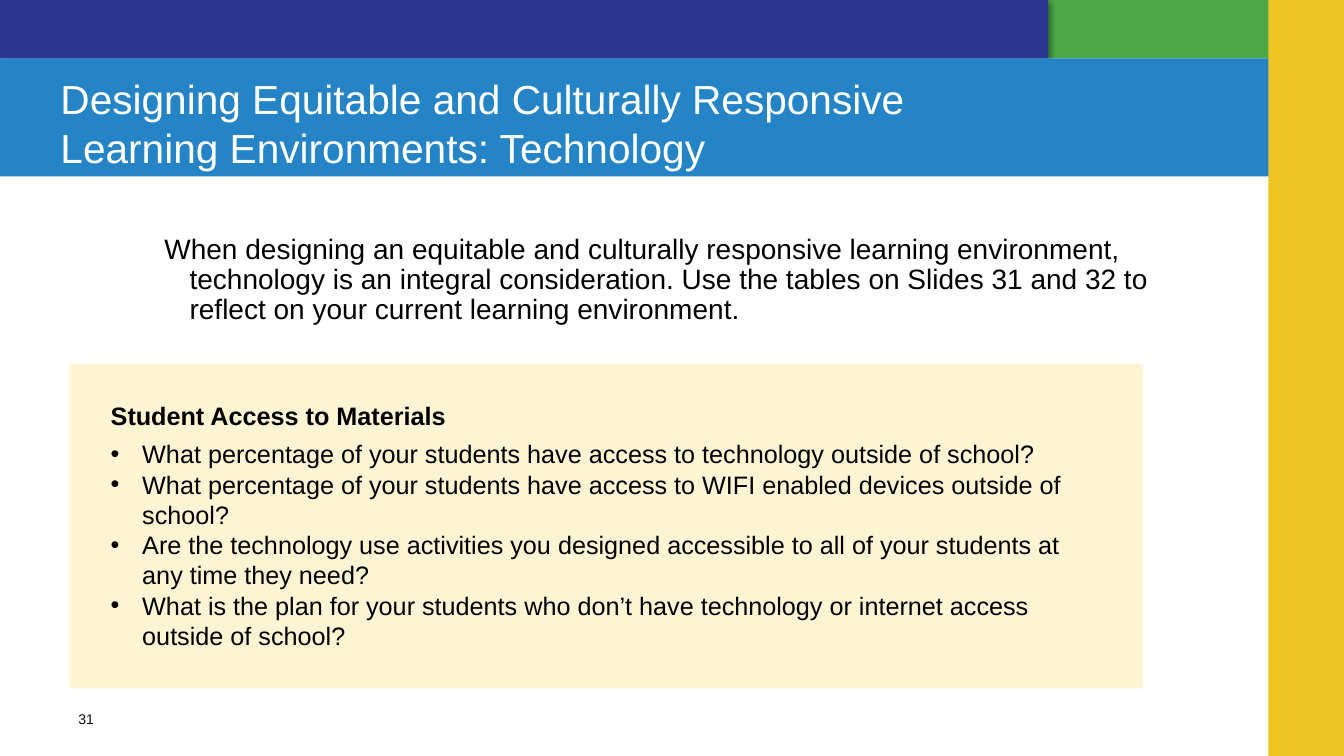
from lxml.etree import SubElement
from pptx import Presentation
from pptx.dml.color import RGBColor
from pptx.enum.shapes import MSO_SHAPE
from pptx.enum.text import MSO_ANCHOR, PP_ALIGN
from pptx.oxml import parse_xml
from pptx.oxml.ns import nsdecls, qn
from pptx.util import Pt

COLORS = {
    "green": "4EA848", "navy": "2B3890", "blue": "2484C6", "yellow": "EEC621",
    "cream": "FCF4D3", "white": "FFFFFF", "black": "000000", "gray": "0D0D0D",
}
W, H = 960, 540
BAND_H, TITLE_H, SIDE_W = 41.8, 84.2, 54

prs = Presentation()
prs.slide_width, prs.slide_height = Pt(W), Pt(H)
s = prs.slides.add_slide(prs.slide_layouts[6])


def add_rect(x, y, w, h, color):
    sp = s.shapes.add_shape(MSO_SHAPE.RECTANGLE, Pt(x), Pt(y), Pt(w), Pt(h))
    sp.shadow.inherit = False
    sp.fill.solid()
    sp.fill.fore_color.rgb = RGBColor.from_string(COLORS[color])
    sp.line.fill.background()
    return sp


def add_text(text, box=None, sp=None, size=18, color="black", bold=False, align=PP_ALIGN.LEFT,
             anchor=MSO_ANCHOR.TOP, margins=(7.2, 3.6, 7.2, 3.6), indent=0, bullet=False,
             spacing=None, after=0):
    if sp is None:
        sp = s.shapes.add_textbox(*map(Pt, box))
    tf = sp.text_frame
    tf.word_wrap = True
    tf.vertical_anchor = anchor
    tf.margin_left, tf.margin_top, tf.margin_right, tf.margin_bottom = map(Pt, margins)
    p = tf.add_paragraph() if tf.text else tf.paragraphs[0]
    p.text = text
    p.alignment = align
    p.space_after = Pt(after)
    if spacing:
        p.line_spacing = spacing
    if indent:
        pPr = p._p.get_or_add_pPr()
        pPr.set("marL", str(Pt(indent)))
        pPr.set("indent", str(-Pt(indent)))
        if bullet:
            SubElement(pPr, qn("a:buFont"), typeface="Arial")
            SubElement(pPr, qn("a:buChar"), char="•")
    for r in p.runs:
        r.font.name = "Arial"
        r.font.size = Pt(size)
        r.font.bold = bold
        r.font.color.rgb = RGBColor.from_string(COLORS[color])
    return sp


add_rect(0, 0, W, BAND_H, "green")
navy_band = add_rect(0, 0, 748.8, BAND_H, "navy")
effects = navy_band._element.spPr.find(qn("a:effectLst"))
effects.append(parse_xml(
    f'<a:outerShdw {nsdecls("a")} blurRad="{Pt(4)}" dist="{Pt(2)}" dir="2700000" '
    'algn="tl" rotWithShape="0"><a:srgbClr val="000000"><a:alpha val="40000"/>'
    '</a:srgbClr></a:outerShdw>'))

title_bar = add_rect(0, BAND_H, W, TITLE_H, "blue")
add_text("Designing Equitable and Culturally Responsive\vLearning Environments: Technology",
         sp=title_bar, size=29, color="white", anchor=MSO_ANCHOR.MIDDLE, margins=(43.2, 7.2, 0, 0))
add_rect(W - SIDE_W, 0, SIDE_W, H, "yellow")

add_text("When designing an equitable and culturally responsive learning environment, technology "
         "is an integral consideration. Use the tables on Slides 31 and 32 to reflect on your "
         "current learning environment.",
         box=(117.4, 167.8, 738, 69), size=20, margins=(0, 0, 0, 0), indent=18, spacing=0.9, after=2)

add_rect(49.7, 260, 766.8, 231.8, "cream")
questions = add_text("Student Access to Materials", box=(72, 282.2, 718.6, 188), bold=True, after=6)
for question in (
    "What percentage of your students have access to technology outside of school?",
    "What percentage of your students have access to WIFI enabled devices outside of school?",
    "Are the technology use activities you designed accessible to all of your students at any time they need?",
    "What is the plan for your students who don’t have technology or internet access outside of school?",
):
    add_text(question, sp=questions, indent=22.5, bullet=True)

add_text("31", box=(49.7, 499, 23.8, 28.8), size=10, color="gray", align=PP_ALIGN.CENTER,
         anchor=MSO_ANCHOR.MIDDLE, margins=(0, 3.6, 0, 3.6))

prs.save("out.pptx")
